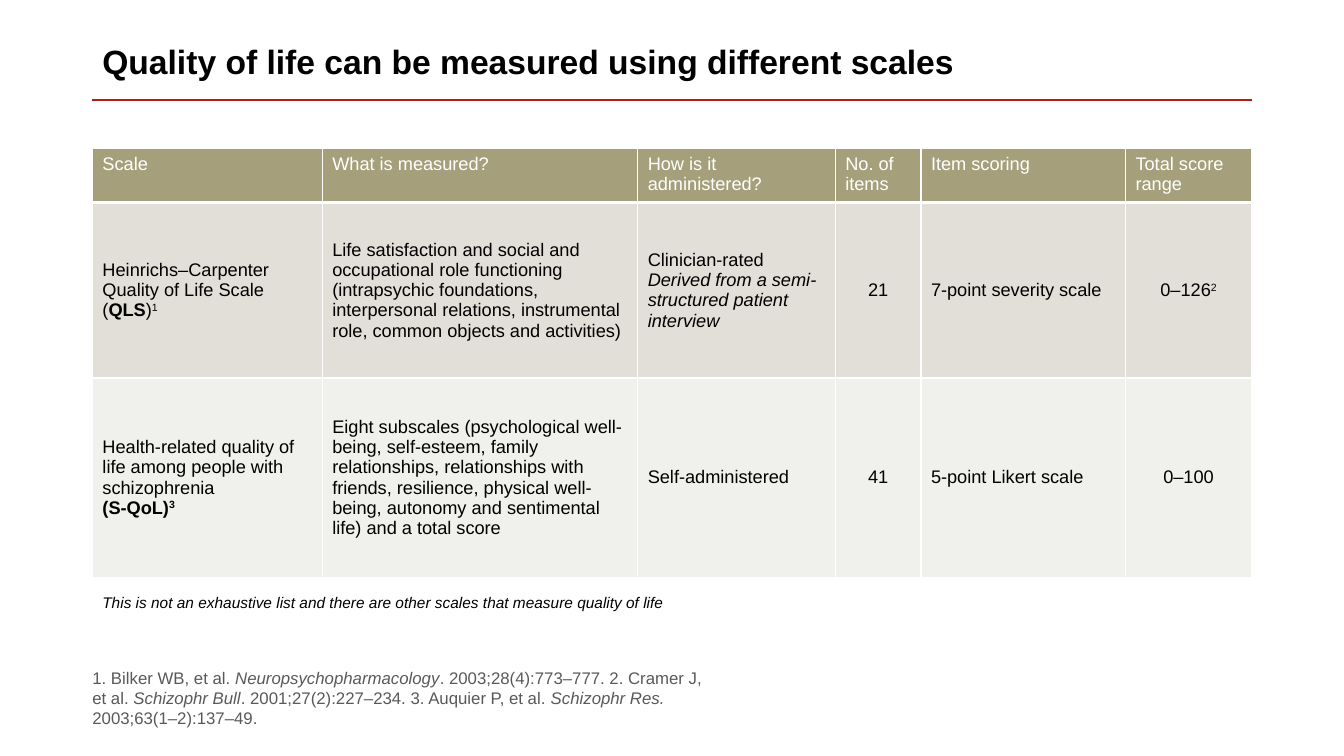
from copy import deepcopy
from dataclasses import dataclass

from lxml.etree import SubElement
from pptx import Presentation
from pptx.dml.color import RGBColor
from pptx.enum.shapes import MSO_CONNECTOR
from pptx.enum.text import MSO_ANCHOR, MSO_AUTO_SIZE, PP_ALIGN
from pptx.oxml import parse_xml
from pptx.oxml.ns import nsdecls, qn
from pptx.util import Inches, Pt


@dataclass(frozen=True)
class Theme:
    font: str = "Arial"
    black: str = "000000"
    white: str = "FFFFFF"
    grey: str = "595959"
    red: str = "B51C12"
    head: str = "A5A07B"
    bands: tuple = ("E1DFD7", "F0F0EC")
    title: int = 24
    table: int = 13
    refs: int = 12
    note: int = 11


THEME = Theme()
COLS, ROWS = 160, 90
WIDTH, HEIGHT = Inches(13.33), Inches(7.5)
LEFT, SPAN = 11, 138
TABLE_COLS = (27.36, 37.56, 23.52, 10.2, 24.36, 15)
TABLE_ROWS = (6, 20.9, 23.7)
CENTRED = (3, 5)

# Each cell is a list of paragraphs, each paragraph a list of (text, style) runs.
# Style letters: b bold, i italic, s superscript.
HEADS = ("Scale", "What is measured?", "How is it administered?",
         "No. of items", "Item scoring", "Total score range")
SCALES = (
    (
        [[("Heinrichs–Carpenter Quality of Life Scale (", ""), ("QLS", "b"),
          (")", ""), ("1", "s")]],
        [[("Life satisfaction and social and occupational role functioning "
           "(intrapsychic foundations, interpersonal relations, instrumental "
           "role, common objects and activities)", "")]],
        [[("Clinician-rated \n", ""),
          ("Derived from a semi-structured patient interview", "i")]],
        [[("21", "")]],
        [[("7-point severity scale", "")]],
        [[("0–126", ""), ("2", "s")]],
    ),
    (
        [[("Health-related quality of life among people with schizophrenia \n", ""),
          ("(S-QoL)", "b"), ("3", "bs")]],
        [[("Eight subscales (psychological well-being, self-esteem, family", "")],
         [("relationships, relationships with friends, resilience, physical "
           "well-being, autonomy and sentimental life) and a total score", "")]],
        [[("Self-administered", "")]],
        [[("41", "")]],
        [[("5-point Likert scale", "")]],
        [[("0–100", "")]],
    ),
)
REFS = [[
    ("1. Bilker WB, et al. ", ""), ("Neuropsychopharmacology", "i"),
    (". 2003;28(4):773–777. 2. Cramer J, et al. ", ""), ("Schizophr Bull", "i"),
    (". 2001;27(2):227–234. 3. Auquier P, et al. ", ""), ("Schizophr Res. ", "i"),
    ("2003;63(1–2):137–49.", ""),
]]


def across(n):
    return round(WIDTH * n / COLS)


def down(n):
    return round(HEIGHT * n / ROWS)


def apply(target, form):
    for name, value in form.items():
        setattr(target, name, value)


def add_run(para, text, style, size, color):
    """Add a run; a trailing newline becomes a line break of the same size."""
    run = para.add_run()
    run.text = text.rstrip("\n")
    apply(run.font, {"name": THEME.font, "size": Pt(size),
                     "bold": "b" in style, "italic": "i" in style})
    run.font.color.rgb = RGBColor.from_string(color)
    props = run.font._element
    if "s" in style:
        props.set("baseline", "30000")
    if text.endswith("\n"):
        para.add_line_break()
        para._p.findall(qn("a:br"))[-1].append(deepcopy(props))


def write(frame, paras, size, color, form):
    for i, runs in enumerate(paras):
        para = frame.add_paragraph() if i else frame.paragraphs[0]
        apply(para, form)
        for text, style in runs:
            add_run(para, text, style, size, color)


def add_text(slide, box, paras, size, color, frame_form, para_form):
    x, y, w, h = box
    shape = slide.shapes.add_textbox(across(x), down(y), across(w), down(h))
    apply(shape.text_frame, {"word_wrap": True, **frame_form})
    write(shape.text_frame, paras, size, color, para_form)


def add_rule(slide, y):
    line = slide.shapes.add_connector(
        MSO_CONNECTOR.STRAIGHT, across(LEFT), down(y), across(LEFT + SPAN), down(y))
    line.line.color.rgb = RGBColor.from_string(THEME.red)
    line.line.width = Pt(1.5)
    SubElement(line._element.spPr, qn("a:effectLst"))


def edge(cell, base):
    """Draw white cell borders, with the bottom one base points wide."""
    props = cell._tc.get_or_add_tcPr()
    for i, (side, width) in enumerate((("L", 1), ("R", 1), ("T", 1), ("B", base))):
        props.insert(i, parse_xml(
            f'<a:ln{side} {nsdecls("a")} w="{Pt(width)}"><a:solidFill>'
            f'<a:srgbClr val="{THEME.white}"/></a:solidFill></a:ln{side}>'))


def fill_cell(cell, paras, fill, color, anchor, align, base):
    cell.fill.solid()
    cell.fill.fore_color.rgb = RGBColor.from_string(fill)
    cell.vertical_anchor = anchor
    edge(cell, base)
    write(cell.text_frame, paras, THEME.table, color, {"alignment": align})


def add_grid(slide, y):
    table = slide.shapes.add_table(
        len(TABLE_ROWS), len(TABLE_COLS), across(LEFT), down(y),
        across(SPAN), down(sum(TABLE_ROWS))).table
    apply(table, {"first_row": False, "horz_banding": False})
    for col, width in zip(table.columns, TABLE_COLS):
        col.width = across(width)
    for row, height in zip(table.rows, TABLE_ROWS):
        row.height = down(height)
    for c, text in enumerate(HEADS):
        fill_cell(table.cell(0, c), [[(text, "")]], THEME.head, THEME.white,
                  MSO_ANCHOR.TOP, PP_ALIGN.LEFT, 3)
    for r, (scale, band) in enumerate(zip(SCALES, THEME.bands), 1):
        for c, paras in enumerate(scale):
            align = PP_ALIGN.CENTER if c in CENTRED else PP_ALIGN.LEFT
            fill_cell(table.cell(r, c), paras, band, THEME.black,
                      MSO_ANCHOR.MIDDLE, align, 1)


def margins(size):
    return {f"margin_{side}": Inches(size)
            for side in ("left", "top", "right", "bottom")}


def main():
    deck = Presentation()
    apply(deck, {"slide_width": WIDTH, "slide_height": HEIGHT})
    slide = deck.slides.add_slide(deck.slide_layouts[6])
    grow = {"auto_size": MSO_AUTO_SIZE.SHAPE_TO_FIT_TEXT}

    add_rule(slide, 11.9)
    add_text(slide, (LEFT, 4.8, SPAN, 6.7),
             [[("Quality of life can be measured using different scales", "b")]],
             THEME.title, THEME.black, {}, {"line_spacing": 0.9})
    add_text(slide, (LEFT, 79.5, 73.5, 7.1), REFS, THEME.refs, THEME.grey,
             {"vertical_anchor": MSO_ANCHOR.BOTTOM, **margins(0), **grow},
             {"line_spacing": Pt(14)})
    add_grid(slide, 17.7)
    add_text(slide, (LEFT, 69.5, 86, 4.5),
             [[("This is not an exhaustive list and there are other scales "
                "that measure quality of life", "i")]],
             THEME.note, THEME.black, {**margins(0.1), **grow},
             {"space_after": Pt(3)})
    deck.save("out.pptx")


if __name__ == "__main__":
    main()
